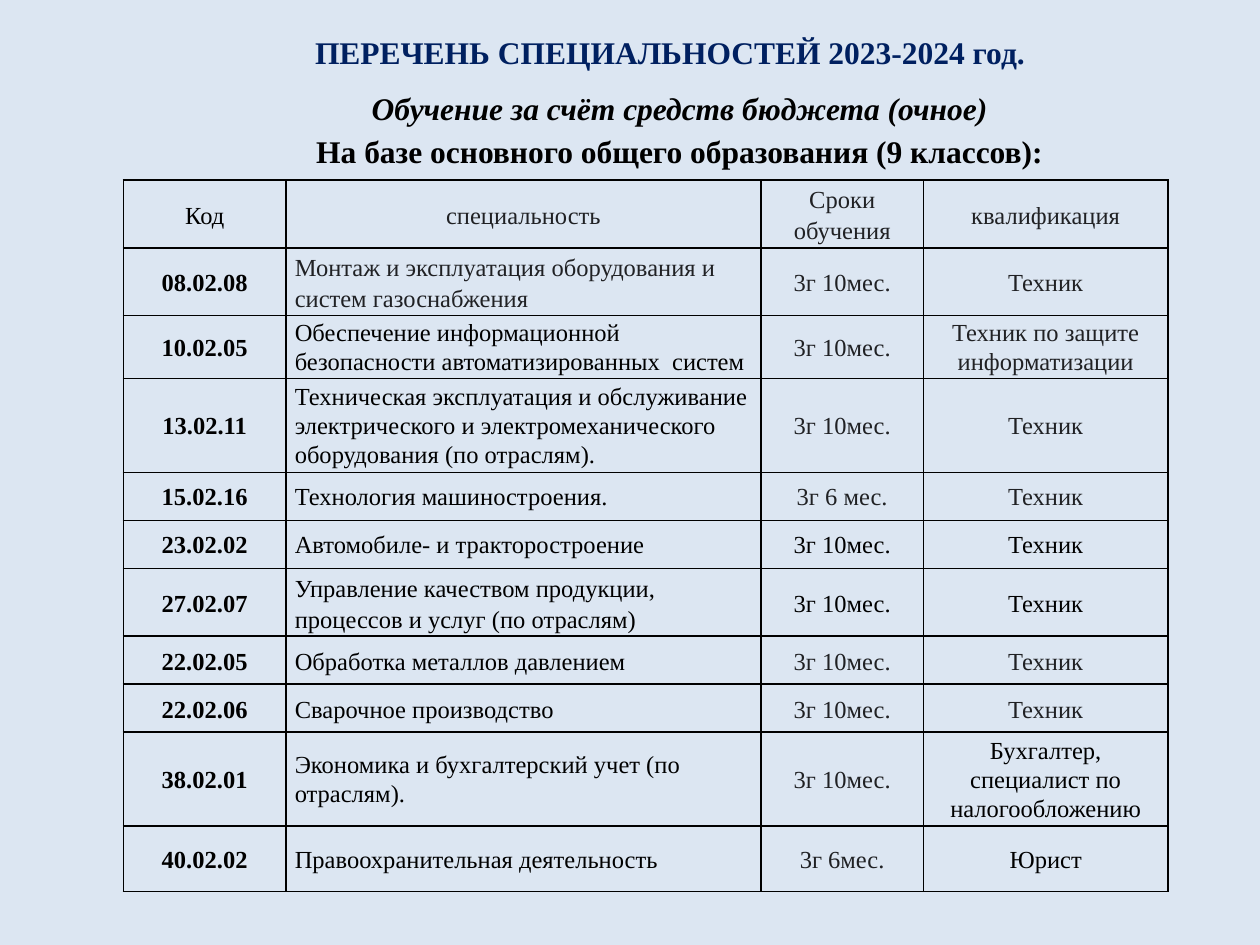
from lxml import etree
from pptx import Presentation
from pptx.dml.color import RGBColor
from pptx.enum.text import MSO_ANCHOR, MSO_AUTO_SIZE, PP_ALIGN
from pptx.oxml.ns import qn
from pptx.util import Inches, Pt

LEFT, CENTER = PP_ALIGN.LEFT, PP_ALIGN.CENTER
TOP, MIDDLE = MSO_ANCHOR.TOP, MSO_ANCHOR.MIDDLE
FIT_SHAPE = MSO_AUTO_SIZE.SHAPE_TO_FIT_TEXT

FONT = "Times New Roman"
BACKGROUND = RGBColor(0xDC, 0xE6, 0xF2)
NAVY = RGBColor(0x00, 0x20, 0x60)
BLACK = RGBColor(0x00, 0x00, 0x00)
GRAY = RGBColor(0x20, 0x21, 0x24)

HEADING = "ПЕРЕЧЕНЬ СПЕЦИАЛЬНОСТЕЙ 2023-2024 год."
FUNDING = "Обучение за счёт средств бюджета (очное)"
BASIS = "На базе основного общего образования (9 классов):"

COLUMN_WIDTHS = [1.29, 3.77, 1.29, 1.94]
CODE, SPECIALTY, TERM, QUALIFICATION = range(4)
LOOSE, TIGHT = 1.15, 1.07
TERM_ON = {TERM, QUALIFICATION}

# (cells, row height, line spacing, columns in gray)
ROWS = [
    (("Код", "специальность", "Сроки обучения", "квалификация"),
     0.44, LOOSE, {SPECIALTY} | TERM_ON),
    (("08.02.08", "Монтаж и эксплуатация оборудования и систем газоснабжения",
      "3г 10мес.", "Техник"), 0.44, LOOSE, {SPECIALTY} | TERM_ON),
    (("10.02.05", "Обеспечение информационной безопасности автоматизированных  систем",
      "3г 10мес.", "Техник по защите информатизации"), 0.41, TIGHT, TERM_ON),
    (("13.02.11", "Техническая эксплуатация и обслуживание электрического и "
      "электромеханического оборудования (по отраслям).",
      "3г 10мес.", "Техник"), 0.62, TIGHT, TERM_ON),
    (("15.02.16", "Технология машиностроения.", "3г 6 мес.", "Техник"),
     0.38, TIGHT, TERM_ON),
    (("23.02.02", "Автомобиле- и тракторостроение", "3г 10мес.", "Техник"),
     0.38, TIGHT, set()),
    (("27.02.07", "Управление качеством продукции, процессов и услуг (по отраслям)",
      "3г 10мес.", "Техник"), 0.44, LOOSE, set()),
    (("22.02.05", "Обработка металлов давлением", "3г 10мес.", "Техник"),
     0.38, LOOSE, TERM_ON),
    (("22.02.06", "Сварочное производство", "3г 10мес.", "Техник"),
     0.38, LOOSE, TERM_ON),
    (("38.02.01", "Экономика и бухгалтерский учет (по отраслям).", "3г 10мес.",
      "Бухгалтер,\nспециалист по налогообложению"), 0.62, TIGHT, {TERM}),
    (("40.02.02", "Правоохранительная деятельность", "3г 6мес.", "Юрист"),
     0.52, TIGHT, {TERM}),
]


def format_paragraph(paragraph, size, color, align, spacing=1.0, bold=False, italic=False):
    paragraph.alignment = align
    paragraph.line_spacing = spacing
    paragraph.space_before = paragraph.space_after = Pt(0)
    font = paragraph.font
    font.name, font.size, font.bold, font.italic = FONT, Pt(size), bold, italic
    font.color.rgb = color


def add_borders(cell):
    """Draw a 1 pt black line on all four sides, ahead of the cell's fill."""
    properties = cell._tc.get_or_add_tcPr()
    for index, side in enumerate(("a:lnL", "a:lnR", "a:lnT", "a:lnB")):
        line = etree.Element(qn(side), w=str(Pt(1)))
        fill = etree.SubElement(line, qn("a:solidFill"))
        etree.SubElement(fill, qn("a:srgbClr"), val=str(BLACK))
        properties.insert(index, line)


def add_heading(slide):
    title = slide.shapes.title
    title.left, title.top = Inches(2.4), Inches(0.21)
    title.width, title.height = Inches(5.89), Inches(0.4)
    frame = title.text_frame
    frame.text = HEADING
    frame.word_wrap = False
    frame.auto_size = FIT_SHAPE
    frame.vertical_anchor = TOP
    format_paragraph(frame.paragraphs[0], 18, NAVY, LEFT, bold=True)


def add_subheading(slide):
    box = slide.shapes.add_textbox(Inches(1.38), Inches(0.61), Inches(8.03), Inches(0.8))
    frame = box.text_frame
    frame.word_wrap = True
    frame.auto_size = FIT_SHAPE
    frame.text = f"{FUNDING}\n{BASIS}"
    for paragraph, italic in zip(frame.paragraphs, (True, False)):
        format_paragraph(paragraph, 18, BLACK, CENTER, LOOSE, bold=True, italic=italic)


def add_specialties(slide):
    height = sum(row[1] for row in ROWS)
    table = slide.shapes.add_table(
        len(ROWS), len(COLUMN_WIDTHS), Inches(0.98), Inches(1.43),
        Inches(sum(COLUMN_WIDTHS)), Inches(height)).table
    table.first_row = table.horz_banding = False
    for column, width in zip(table.columns, COLUMN_WIDTHS):
        column.width = Inches(width)
    for r, (texts, row_height, spacing, gray_columns) in enumerate(ROWS):
        table.rows[r].height = Inches(row_height)
        for c, text in enumerate(texts):
            cell = table.cell(r, c)
            cell.margin_left = cell.margin_right = Inches(0.07)
            cell.margin_top = cell.margin_bottom = 0
            cell.vertical_anchor = MIDDLE
            cell.fill.background()
            add_borders(cell)
            cell.text = text
            for paragraph in cell.text_frame.paragraphs:
                format_paragraph(
                    paragraph, 14, GRAY if c in gray_columns else BLACK,
                    LEFT if r and c == SPECIALTY else CENTER,
                    spacing, bold=r > 0 and c == CODE)


def main():
    presentation = Presentation()
    presentation.slide_width, presentation.slide_height = Inches(10), Inches(7.5)
    slide = presentation.slides.add_slide(presentation.slide_layouts.get_by_name("Title Only"))
    slide.background.fill.solid()
    slide.background.fill.fore_color.rgb = BACKGROUND
    add_heading(slide)
    add_subheading(slide)
    add_specialties(slide)
    presentation.save("out.pptx")


if __name__ == "__main__":
    main()
